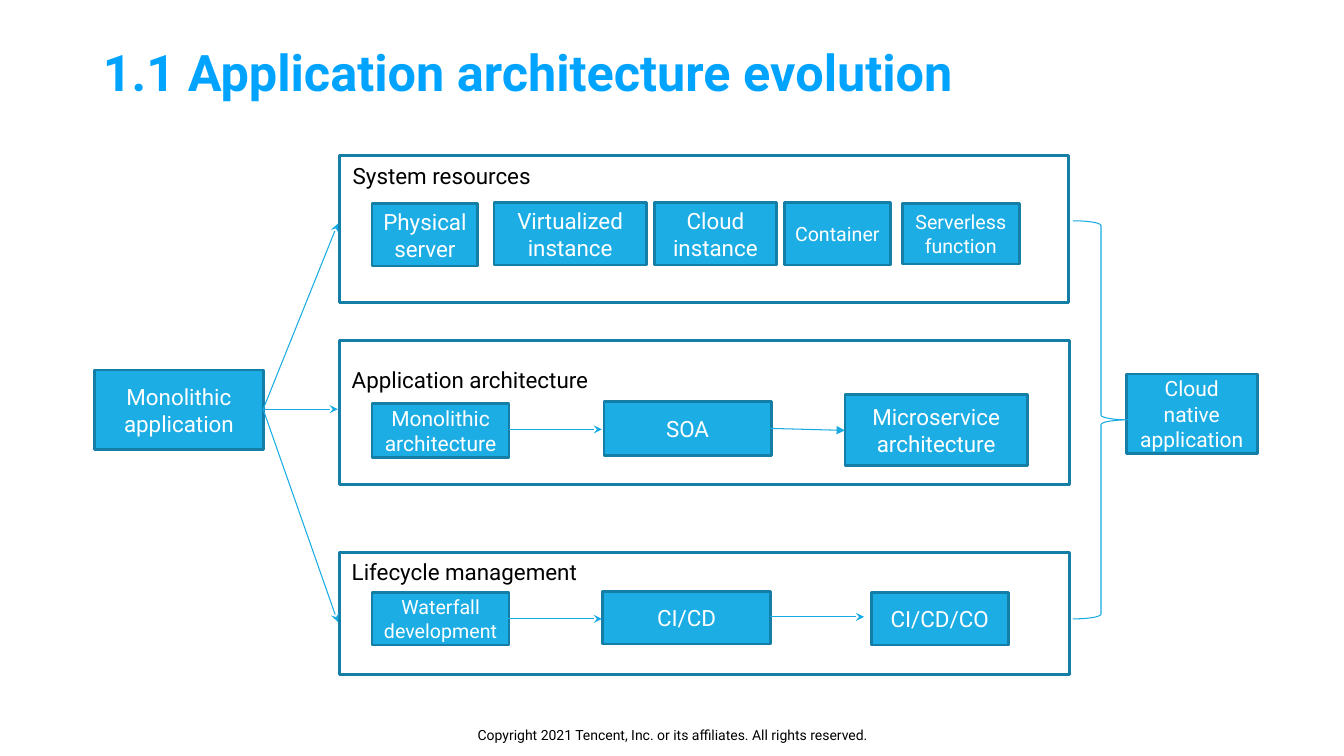
import pptx
import pptx.dml.color
import pptx.enum.shapes
import pptx.enum.text
import pptx.oxml.ns
import pptx.util
from dataclasses import dataclass
from lxml import etree
from pptx.util import Inches


@dataclass(frozen=True)
class Theme:
    font: str = "Roboto"
    title: str = "00A4FF"
    fill: str = "1CADE4"
    border: str = "147EA6"
    arrow: str = "16ABE2"
    white: str = "FFFFFF"
    black: str = "000000"
    title_size: int = 36
    body_size: int = 16
    medium_size: int = 15
    small_size: int = 14
    footer_size: int = 10
    border_width: float = 2
    arrow_width: float = 0.75


theme = Theme()
rgb = pptx.dml.color.RGBColor.from_string
SHAPE = pptx.enum.shapes.MSO_SHAPE
ALIGN = pptx.enum.text.PP_ALIGN
ANCHOR = pptx.enum.text.MSO_ANCHOR


def write(holder, text, size, color, align=ALIGN.LEFT, anchor=ANCHOR.MIDDLE):
    frame = holder.text_frame
    frame.text = text
    frame.word_wrap = True
    frame.vertical_anchor = anchor
    paragraph = frame.paragraphs[0]
    paragraph.alignment = align
    font = paragraph.runs[0].font
    font.name = theme.font
    font.size = pptx.util.Pt(size)
    font.color.rgb = rgb(color)
    return paragraph


def add_box(left, top, width, height, fill):
    box = slide.shapes.add_shape(
        SHAPE.RECTANGLE, Inches(left), Inches(top), Inches(width), Inches(height))
    box.shadow.inherit = False
    box.fill.solid()
    box.fill.fore_color.rgb = rgb(fill)
    box.line.color.rgb = rgb(theme.border)
    box.line.width = pptx.util.Pt(theme.border_width)
    return box


presentation = pptx.Presentation()
presentation.slide_width = Inches(13.33)
presentation.slide_height = Inches(7.5)
slide = presentation.slides.add_slide(presentation.slide_layouts[5])

# Title
title = slide.shapes.title
title.left, title.top = Inches(0.92), Inches(0.25)
title.width, title.height = Inches(10.74), Inches(0.99)
heading = write(title, "1.1 Application architecture evolution", theme.title_size, theme.title)
heading.line_spacing = 0.9
heading.runs[0].font.bold = True

# Copyright line
copyright_line = slide.shapes.add_textbox(Inches(4.07), Inches(7.09), Inches(5.2), Inches(0.4))
write(copyright_line, "Copyright 2021 Tencent, Inc. or its affiliates. All rights reserved.",
      theme.footer_size, theme.black, ALIGN.CENTER)

# Framed areas: heading, frame, heading position and size
areas = [
    ("System resources", (3.37, 1.54, 7.23, 1.46), (3.4, 1.56, 2.71, 0.42)),
    ("Application architecture", (3.37, 3.38, 7.24, 1.43), (3.39, 3.58, 2.56, 0.36)),
    ("Lifecycle management", (3.37, 5.48, 7.24, 1.21), (3.39, 5.49, 3.32, 0.34)),
]
for area_name, frame_bounds, name_bounds in areas:
    add_box(*frame_bounds, theme.white)
    area_heading = slide.shapes.add_textbox(*map(Inches, name_bounds))
    write(area_heading, area_name, theme.body_size, theme.black, anchor=ANCHOR.TOP)

# Stages: text, left, top, width, height, type size
stages = [
    ("Monolithic application", 0.94, 3.67, 1.67, 0.79, theme.body_size),
    ("Physical server", 3.69, 2.02, 1.05, 0.62, theme.body_size),
    ("Virtualized instance", 4.9, 2.01, 1.51, 0.62, theme.body_size),
    ("Cloud instance", 6.49, 2.01, 1.21, 0.62, theme.body_size),
    ("Container", 7.78, 2.01, 1.05, 0.62, theme.small_size),
    ("Serverless function", 8.95, 2.02, 1.16, 0.6, theme.small_size),
    ("Monolithic architecture", 3.69, 4, 1.36, 0.54, theme.medium_size),
    ("SOA", 5.99, 3.98, 1.66, 0.54, theme.body_size),
    ("Microservice architecture", 8.38, 3.91, 1.81, 0.71, theme.body_size),
    ("Waterfall development", 3.69, 5.88, 1.36, 0.52, theme.small_size),
    ("CI/CD", 5.98, 5.87, 1.66, 0.52, theme.body_size),
    ("CI/CD/CO", 8.64, 5.88, 1.36, 0.52, theme.body_size),
    ("Cloud native application", 11.17, 3.71, 1.3, 0.79, theme.medium_size),
]
for stage_name, left, top, width, height, size in stages:
    stage = add_box(left, top, width, height, theme.fill)
    write(stage, stage_name, size, theme.white, ALIGN.CENTER)

# Brace gathering the areas
brace = slide.shapes.add_shape(
    SHAPE.RIGHT_BRACE, Inches(10.64), Inches(2.19), Inches(0.56), Inches(3.95))
brace.shadow.inherit = False
brace.fill.background()
brace.line.color.rgb = rgb(theme.arrow)
brace.line.width = pptx.util.Pt(theme.arrow_width)

# Arrows: start, end, head
fan_start = (2.61, 4.06)
arrows = [(fan_start, (3.35, end_y), "stealth") for end_y in (2.22, 4.06, 6.17)]
arrows += [
    ((5.05, 4.26), (5.97, 4.26), "stealth"),
    ((7.64, 4.25), (8.38, 4.27), "triangle"),
    ((5.04, 6.14), (5.97, 6.14), "stealth"),
    ((7.64, 6.12), (8.57, 6.12), "stealth"),
]
for start, end, head in arrows:
    arrow = slide.shapes.add_connector(
        pptx.enum.shapes.MSO_CONNECTOR.STRAIGHT, *map(Inches, start + end))
    arrow.line.color.rgb = rgb(theme.arrow)
    arrow.line.width = pptx.util.Pt(theme.arrow_width)
    properties = arrow.line._get_or_add_ln()
    etree.SubElement(properties, pptx.oxml.ns.qn("a:tailEnd"), type=head)
    etree.SubElement(properties.getparent(), pptx.oxml.ns.qn("a:effectLst"))

presentation.save("out.pptx")
